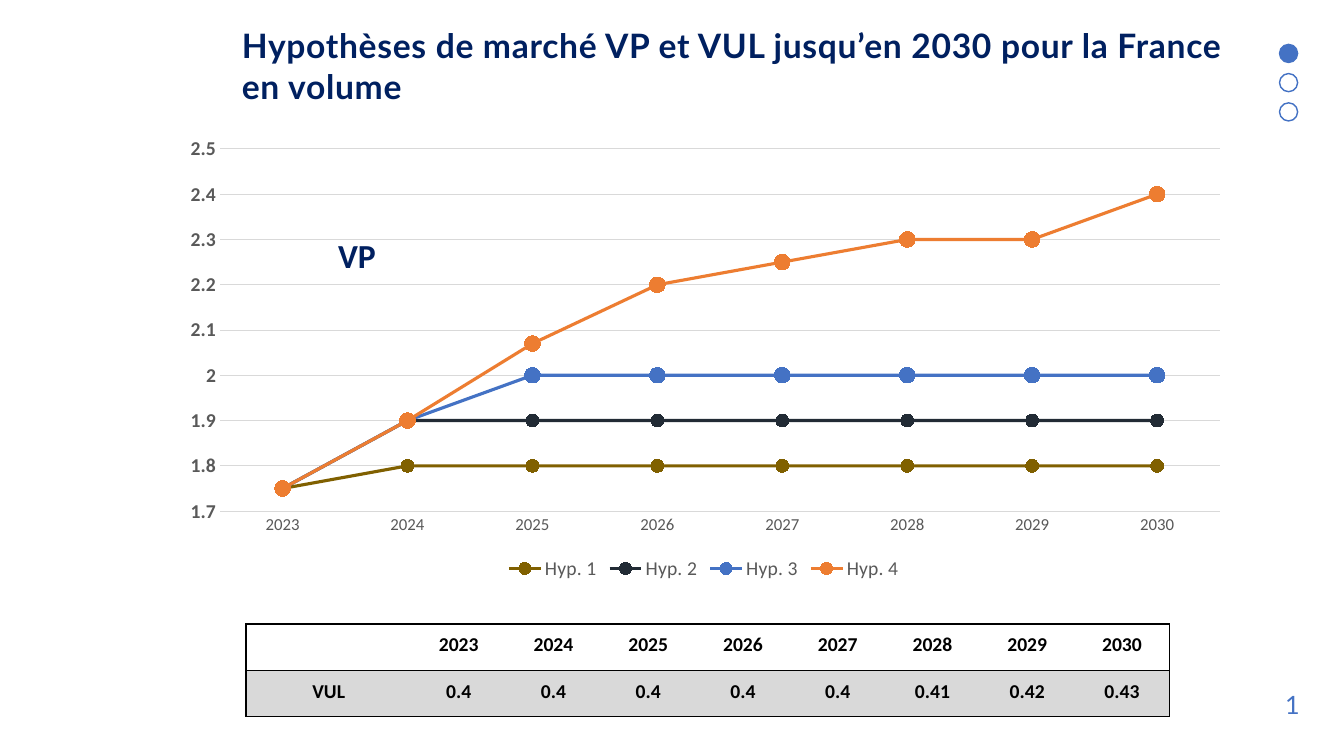
from dataclasses import dataclass

from pptx import Presentation
from pptx.chart.data import CategoryChartData
from pptx.dml.color import RGBColor
from pptx.enum.chart import XL_CHART_TYPE as ChartType, XL_LEGEND_POSITION as LegendPosition
from pptx.enum.chart import XL_MARKER_STYLE as MarkerStyle, XL_TICK_MARK as TickMark
from pptx.enum.shapes import MSO_SHAPE as Shape
from pptx.enum.text import MSO_ANCHOR as Anchor, PP_ALIGN as Align
from pptx.oxml import parse_xml
from pptx.oxml.ns import nsdecls
from pptx.util import Pt


@dataclass(frozen=True)
class Theme:
    navy: str = "002060"
    blue: str = "4472C4"
    olive: str = "806000"
    slate: str = "222B35"
    ink: str = "161616"
    orange: str = "ED7D31"
    gray: str = "595959"
    rule: str = "D9D9D9"
    black: str = "000000"
    white: str = "FFFFFF"
    heading_font: str = "Lato"
    body_font: str = "Calibri"
    title: int = 24
    number: int = 18
    label: int = 14
    tick: int = 12


class SlideBuilder:
    """Draws styled elements on the current slide, with lengths in px of 1/100 inch."""

    def __init__(self, slide, theme):
        self.slide, self.theme = slide, theme

    @staticmethod
    def px(*lengths):
        return [length * 9144 for length in lengths]

    def style(self, font, size, color, name, bold=False):
        font.size, font.name, font.bold = Pt(size), name, bold
        font.color.rgb = RGBColor.from_string(color)

    def stroke(self, line, color, width):
        line.color.rgb = RGBColor.from_string(color)
        line.width = Pt(width)

    def paint(self, fill, color):
        if color:
            fill.solid()
            fill.fore_color.rgb = RGBColor.from_string(color)
        else:
            fill.background()

    def dot(self, box, color, fill=None):
        dot = self.slide.shapes.add_shape(Shape.OVAL, *self.px(*box))
        dot.shadow.inherit = False
        self.paint(dot.fill, fill)
        self.stroke(dot.line, color, 1)

    def text(self, box, words, size, color, name, bold=False, align=Align.LEFT,
             anchor=Anchor.TOP, spacing=0, outline=None):
        frame = self.slide.shapes.add_textbox(*self.px(*box)).text_frame
        frame.word_wrap, frame.vertical_anchor = True, anchor
        paragraph = frame.paragraphs[0]
        paragraph.alignment = align
        run = paragraph.add_run()
        run.text = words
        self.style(run.font, size, color, name, bold)
        properties = run.font._element
        if spacing:
            properties.set("spc", str(spacing))
        if outline:
            properties.insert(0, self.line_xml("ln", outline, 0.75))

    @staticmethod
    def line_xml(tag, color, width):
        fill = f'<a:solidFill><a:srgbClr val="{color}"/></a:solidFill>' if width else "<a:noFill/>"
        return parse_xml(f'<a:{tag} {nsdecls("a")} w="{int(width * 12700)}">{fill}</a:{tag}>')

    def table(self, box, rows, first_width, column_width, fills):
        last_row, last_column = len(rows) - 1, len(rows[0]) - 1
        table = self.slide.shapes.add_table(last_row + 1, last_column + 1, *self.px(*box)).table
        table.first_row = table.horz_banding = False
        for c, column in enumerate(table.columns):
            column.width, = self.px(column_width if c else first_width)
        for r, row in enumerate(rows):
            for c, words in enumerate(row):
                cell = table.cell(r, c)
                cell.vertical_anchor = Anchor.MIDDLE
                margins = self.px(1, 1, 1, 5)
                cell.margin_left, cell.margin_right, cell.margin_top, cell.margin_bottom = margins
                widths = {"lnL": 0 if c else 1, "lnR": int(c == last_column),
                          "lnT": 0.5 if r else 1, "lnB": 1 if r == last_row else 0.5}
                for tag, width in widths.items():
                    cell._tc.get_or_add_tcPr().append(self.line_xml(tag, self.theme.black, width))
                self.paint(cell.fill, fills[r])
                paragraph = cell.text_frame.paragraphs[0]
                paragraph.alignment = Align.CENTER
                if words:
                    run = paragraph.add_run()
                    run.text = words
                    self.style(run.font, self.theme.label, self.theme.black,
                               self.theme.body_font, True)

    def line_chart(self, box, years, hypotheses, plot_area):
        theme = self.theme
        data = CategoryChartData()
        data.categories = years
        for name, values, *_ in hypotheses:
            data.add_series(name, values)
        chart = self.slide.shapes.add_chart(ChartType.LINE_MARKERS, *self.px(*box), data).chart
        chart.has_title = False
        self.style(chart.font, 10, theme.black, theme.body_font)
        chart.has_legend = True
        chart.legend.position = LegendPosition.BOTTOM
        chart.legend.include_in_layout = False
        self.style(chart.legend.font, theme.label, theme.gray, theme.body_font)

        years_axis, volumes_axis = chart.category_axis, chart.value_axis
        for axis in (years_axis, volumes_axis):
            axis.major_tick_mark = axis.minor_tick_mark = TickMark.NONE
        self.style(years_axis.tick_labels.font, theme.tick, theme.gray, theme.body_font)
        self.stroke(years_axis.format.line, theme.rule, 0.75)
        self.style(volumes_axis.tick_labels.font, theme.label, theme.gray, theme.body_font, True)
        volumes_axis.format.line.fill.background()
        volumes_axis.minimum_scale, volumes_axis.maximum_scale = 1.7, 2.5
        volumes_axis.major_unit = 0.1
        volumes_axis.has_major_gridlines = True
        self.stroke(volumes_axis.major_gridlines.format.line, theme.rule, 0.75)

        plot = chart.plots[0]
        plot.vary_by_categories = False
        for series, (_, _, color, marker_color, marker_size) in zip(plot.series, hypotheses):
            series.smooth = False
            self.stroke(series.format.line, color, 2.25)
            series.marker.style, series.marker.size = MarkerStyle.CIRCLE, marker_size
            self.paint(series.marker.format.fill, marker_color)
            self.stroke(series.marker.format.line, color, 0.75)

        area = plot._element.getparent()
        for layout in area.xpath("c:layout"):
            area.remove(layout)
        places = "".join(f'<c:{tag} val="{value}"/>' for tag, value in zip("xywh", plot_area))
        area.insert(0, parse_xml(
            f'<c:layout {nsdecls("c")}><c:manualLayout><c:layoutTarget val="inner"/>'
            f'<c:xMode val="edge"/><c:yMode val="edge"/>{places}</c:manualLayout></c:layout>'))


def main():
    deck = Presentation()
    deck.slide_width, deck.slide_height = SlideBuilder.px(1333, 750)
    theme = Theme()
    builder = SlideBuilder(deck.slides.add_slide(deck.slide_layouts[6]), theme)

    for step in range(3):
        builder.dot((1269, 44 + 29 * step, 18, 18), theme.blue, None if step else theme.blue)
    builder.text((1163, 646, 136, 73), "1", theme.number, theme.blue, theme.heading_font,
                 align=Align.RIGHT, anchor=Anchor.BOTTOM)
    builder.text((230, 20, 1018, 93),
                 "Hypothèses de marché VP et VUL jusqu’en 2030 pour la France en volume",
                 theme.title, theme.navy, theme.heading_font, True, spacing=50)

    years = [str(year) for year in range(2023, 2031)]
    vul_volumes = ["0.4"] * 5 + ["0.41", "0.42", "0.43"]
    builder.table((244, 619, 916, 92), [["", *years], ["VUL", *vul_volumes]], 164, 94,
                  [None, theme.rule])

    hypotheses = [
        ("Hyp. 1", [1.75] + [1.8] * 7, theme.olive, theme.olive, 9),
        ("Hyp. 2", [1.75] + [1.9] * 7, theme.slate, theme.ink, 9),
        ("Hyp. 3", [1.75, 1.9] + [2] * 6, theme.blue, theme.blue, 11),
        ("Hyp. 4", [1.75, 1.9, 2.07, 2.2, 2.25, 2.3, 2.3, 2.4], theme.orange, theme.orange, 11),
    ]
    builder.line_chart((165, 125, 1066, 455), years, hypotheses, (0.05, 0.05, 0.93, 0.79))
    builder.text((317, 228, 74, 50), "VP", theme.title, theme.navy, theme.body_font, True,
                 Align.CENTER, outline=theme.white)
    deck.save("out.pptx")


if __name__ == "__main__":
    main()
